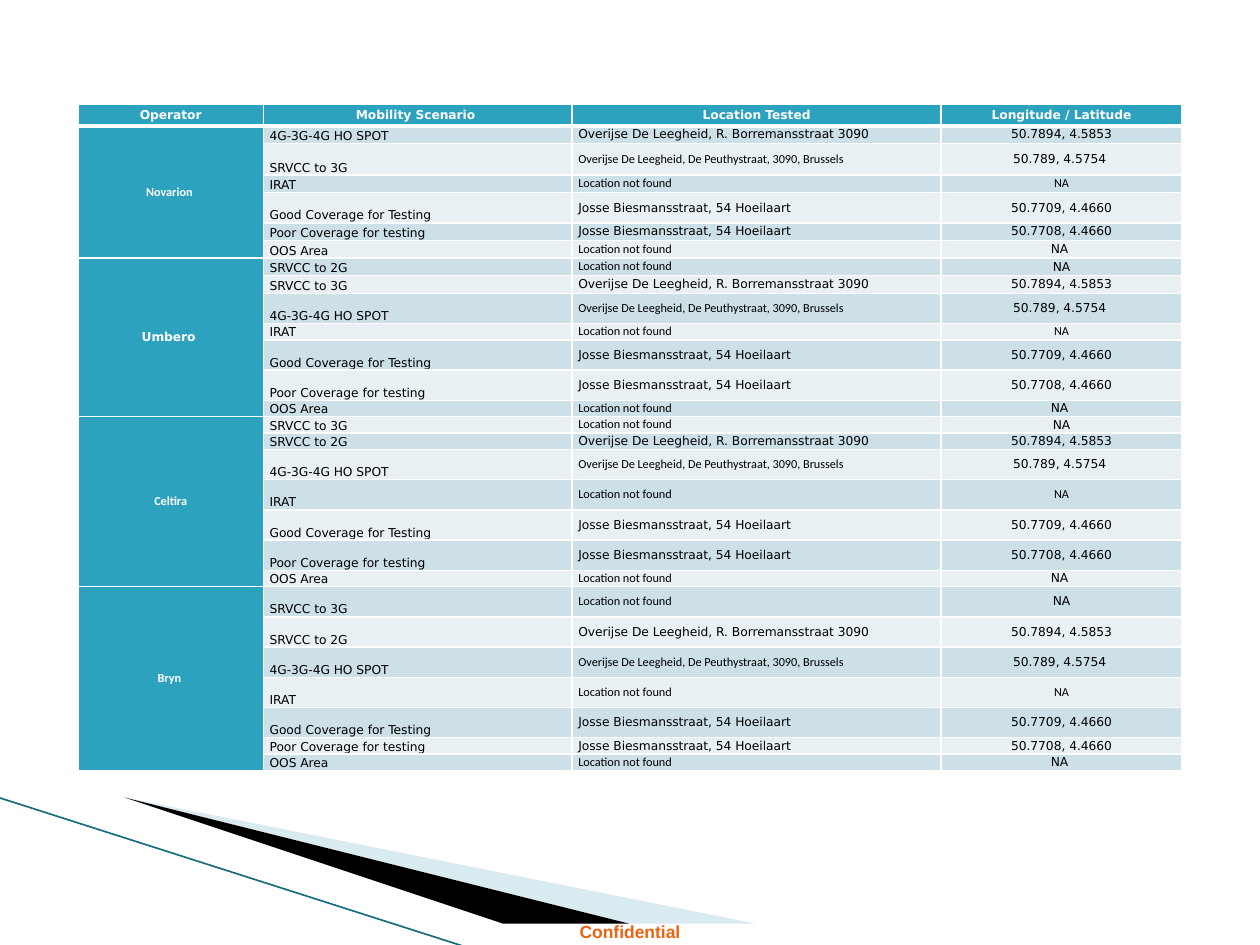
import pptx
import pptx.util
import pptx.dml.color
import pptx.enum.shapes
import pptx.enum.text
import pptx.oxml.ns
import lxml.etree

Inches = pptx.util.Inches
Pt = pptx.util.Pt
RGBColor = pptx.dml.color.RGBColor
ALIGN = pptx.enum.text.PP_ALIGN
ANCHOR = pptx.enum.text.MSO_ANCHOR
qn = pptx.oxml.ns.qn

WHITE = RGBColor(0xFF, 0xFF, 0xFF)
BLACK = RGBColor(0x00, 0x00, 0x00)
TEAL = RGBColor(0x2D, 0xA2, 0xBF)
BANDS = (RGBColor(0xCD, 0xE0, 0xE8), RGBColor(0xE8, 0xF0, 0xF4))
PALE = RGBColor(0xA0, 0xCB, 0xDC)
EDGE = RGBColor(0x1A, 0x6D, 0x81)
ORANGE = RGBColor(0xEB, 0x63, 0x12)

WIDE, SLIM = "DejaVu Sans", "Calibri"

HEADS = ("Operator", "Mobility Scenario ", "Location Tested",
         "Longitude / Latitude")
COLS = (1.47, 2.45, 2.93, 1.91)
LOST = ("Location not found", SLIM)
HOUSE = ("Josse Biesmansstraat, 54 Hoeilaart", WIDE)
# Every operator is tested at these sites; a shorter list skips the first.
SITES = (
    (LOST, ("NA", WIDE)),
    (("Overijse De Leegheid, R. Borremansstraat 3090", WIDE),
     ("50.7894, 4.5853", WIDE)),
    (("Overijse De Leegheid, De Peuthystraat, 3090, Brussels", SLIM),
     ("50.789, 4.5754 ", WIDE)),
    (LOST, ("NA", SLIM)),
    (HOUSE, ("50.7709, 4.4660", WIDE)),
    (HOUSE, ("50.7708, 4.4660", WIDE)),
    (LOST, ("NA ", WIDE)),
)
G2, G3, SPOT = "SRVCC to 2G", "SRVCC to 3G", "4G-3G-4G HO SPOT"
TAIL = ("IRAT", "Good Coverage for Testing", "Poor Coverage for testing",
        "OOS Area")
# Name, font, first scenarios, row heights
GROUPS = (
    ("Novarion ", SLIM, (SPOT, G3), (0.14, 0.25, 0.14, 0.24, 0.14, 0.14)),
    ("Umbero ", WIDE, (G2, G3, SPOT),
     (0.14, 0.14, 0.24, 0.13, 0.24, 0.24, 0.13)),
    ("Celtira", SLIM, (G3, G2, SPOT),
     (0.13, 0.13, 0.24, 0.24, 0.24, 0.24, 0.13)),
    ("Bryn ", SLIM, (G3, G2, SPOT),
     (0.24, 0.24, 0.24, 0.24, 0.24, 0.13, 0.13)),
)


def add_run(para, text, face, size, color, bold):
    run = para.add_run()
    run.text = text
    font = run.font
    font.name, font.size, font.bold = face, Pt(size), bold
    font.color.rgb = color


def edge_cell(cell, top=1, bottom=1):
    props = cell._tc.get_or_add_tcPr()
    for tag, width in (("lnL", 1), ("lnR", 1), ("lnT", top), ("lnB", bottom)):
        line = lxml.etree.SubElement(props, qn("a:" + tag), w=str(Pt(width)))
        fill = lxml.etree.SubElement(line, qn("a:solidFill"))
        lxml.etree.SubElement(fill, qn("a:srgbClr"), val=str(WHITE))


def fill_cell(cell, text, face, fill, strong=False, align=ALIGN.CENTER,
              anchor=ANCHOR.MIDDLE):
    cell.margin_left = cell.margin_right = Inches(0.05)
    cell.margin_top = cell.margin_bottom = 0
    cell.vertical_anchor = anchor
    cell.fill.solid()
    cell.fill.fore_color.rgb = fill
    para = cell.text_frame.paragraphs[0]
    para.alignment = align
    add_run(para, text, face, 7, WHITE if strong else BLACK, strong)


def add_sites(slide, left, top, width, height):
    sizes = [0.17] + [size for group in GROUPS for size in group[3]]
    table = slide.shapes.add_table(len(sizes), len(COLS), left, top, width,
                                   height).table
    table.horz_banding = False
    for col, size in zip(table.columns, COLS):
        col.width = Inches(size)
    for num, size in enumerate(sizes):
        table.rows[num].height = Inches(size)
        for col in range(len(COLS)):
            edge_cell(table.cell(num, col), top=3 if num == 1 else 1,
                      bottom=3 if num == 0 else 1)
    for col, head in enumerate(HEADS):
        fill_cell(table.cell(0, col), head, WIDE, TEAL, strong=True)
    row = 1
    for name, face, first, _ in GROUPS:
        tests = first + TAIL
        lead = table.cell(row, 0)
        lead.merge(table.cell(row + len(tests) - 1, 0))
        fill_cell(lead, name, face, TEAL, strong=True)
        for test, (place, point) in zip(tests, SITES[-len(tests):]):
            band = BANDS[(row - 1) % 2]
            fill_cell(table.cell(row, 1), test, WIDE, band,
                      align=ALIGN.LEFT, anchor=ANCHOR.BOTTOM)
            fill_cell(table.cell(row, 2), *place, band, align=ALIGN.LEFT)
            fill_cell(table.cell(row, 3), *point, band)
            row += 1


def add_wedge(slide, left, top, points, color, alpha=100):
    """Draw a filled outline; points are inches from left and top."""
    pen = slide.shapes.build_freeform(*points[0], scale=Inches(1))
    pen.add_line_segments(points[1:], close=True)
    shape = pen.convert_to_shape(left, top)
    shape.shadow.inherit = False
    shape.line.fill.background()
    shape.fill.solid()
    shape.fill.fore_color.rgb = color
    if alpha < 100:
        tone = shape.fill._xPr.find(".//" + qn("a:srgbClr"))
        lxml.etree.SubElement(tone, qn("a:alpha"), val=str(alpha * 1000))


def add_swoosh(slide, left, top):
    add_wedge(slide, left, top,
              ((0.56, 0.18), (5.96, 1.18), (4.57, 1.18), (0.56, 0.17)),
              PALE, 40)
    add_wedge(slide, left, top,
              ((0.54, 0.16), (4.58, 1.18), (3.73, 1.19), (0.55, 0.17)), BLACK)
    line = slide.shapes.add_connector(
        pptx.enum.shapes.MSO_CONNECTOR.STRAIGHT, left, top,
        left + Inches(3.72), top + Inches(1.19))
    line.line.color.rgb = EDGE
    line.line.width = Pt(0.95)
    lxml.etree.SubElement(line._element.spPr, qn("a:effectLst"))


def add_footer(slide, left, top, width, height):
    frame = slide.shapes.add_textbox(left, top, width, height).text_frame
    frame.word_wrap = True
    para = frame.paragraphs[0]
    para.alignment = ALIGN.CENTER
    add_run(para, "Confidential", "Arial", 10, ORANGE, True)


def main():
    deck = pptx.Presentation()
    deck.slide_width, deck.slide_height = Inches(10), Inches(7.5)
    slide = deck.slides.add_slide(deck.slide_layouts[6])
    add_swoosh(slide, Inches(-0.01), Inches(6.33))
    add_footer(slide, 0, Inches(7.26), Inches(10), Inches(0.27))
    add_sites(slide, Inches(0.62), Inches(0.83), Inches(8.75), Inches(5.28))
    deck.save("out.pptx")


if __name__ == "__main__":
    main()
